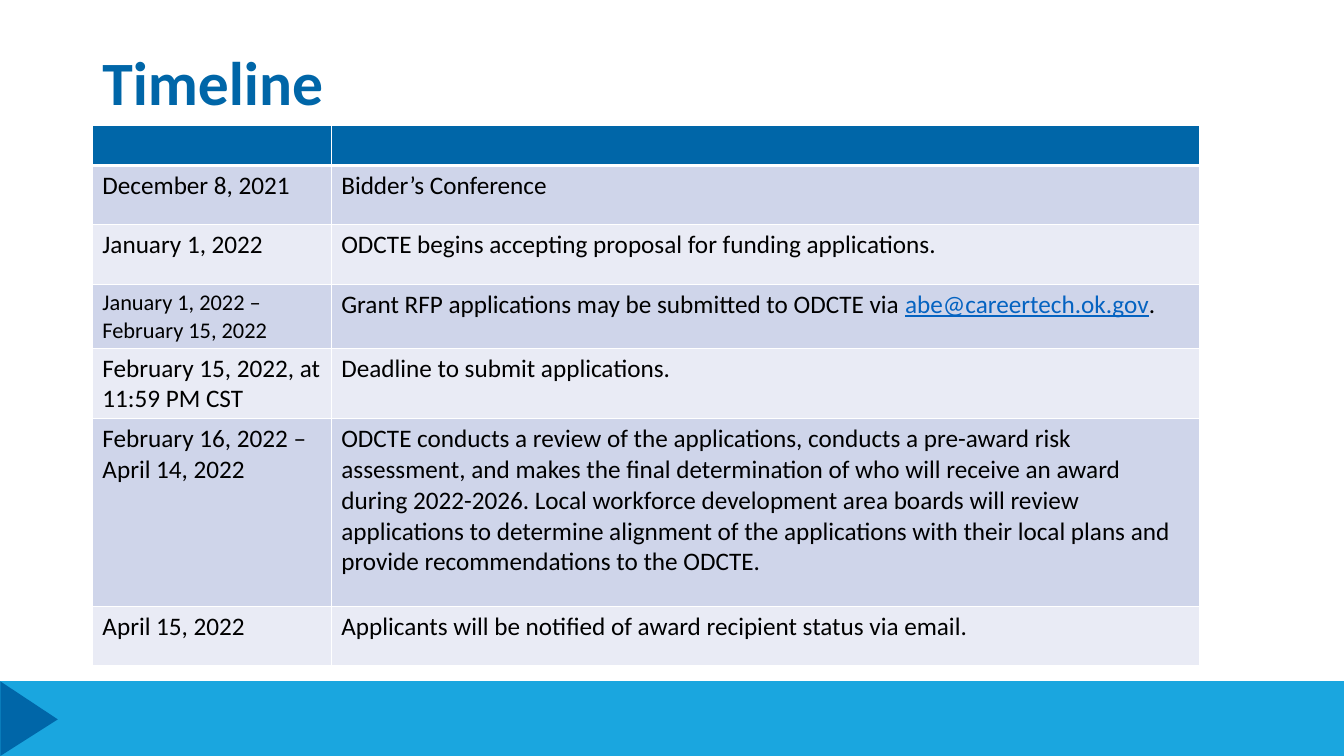
from dataclasses import dataclass
from typing import Any

from lxml.etree import SubElement
from pptx import Presentation
from pptx.dml.color import RGBColor
from pptx.enum.shapes import MSO_SHAPE
from pptx.enum.text import MSO_ANCHOR
from pptx.oxml.ns import qn
from pptx.util import Emu, Inches, Pt

NAVY = RGBColor(0x00, 0x66, 0xA8)
SKY = RGBColor(0x1A, 0xA6, 0xDF)
LINK = RGBColor(0x05, 0x63, 0xC1)
BLACK = RGBColor(0, 0, 0)
WHITE = RGBColor(0xFF, 0xFF, 0xFF)
STRIPES = (RGBColor(0xCF, 0xD5, 0xEA), RGBColor(0xE9, 0xEB, 0xF5))

GRID_COLUMNS, GRID_ROWS = 160, 90
UNIT = Inches(7.5) / GRID_ROWS

TITLE_FORMAT = {"name": "Calibri", "size": Pt(44), "bold": True}
BODY_FORMAT = {"name": "Calibri", "size": Pt(18)}
DATE_WIDTH, EVENT_WIDTH = 28.44, 103.32
HEADER_HEIGHT = 4.56
CONTACT = "abe@careertech.ok.gov"


@dataclass(frozen=True)
class Area:
    """A place on the slide, in grid columns and rows."""
    column: float
    row: float
    width: float
    height: float

    def lengths(self) -> tuple[Emu, ...]:
        return tuple(map(grid, (self.column, self.row, self.width, self.height)))


@dataclass(frozen=True)
class Milestone:
    dates: tuple[str, ...]
    event: str
    height: float = 7.08
    date_size: int = 18


MILESTONES = (
    Milestone(("December 8, 2021",), "Bidder’s Conference"),
    Milestone(("January 1, 2022",), "ODCTE begins accepting proposal for funding applications."),
    Milestone(("January 1, 2022 –", "February 15, 2022"),
              f"Grant RFP applications may be submitted to ODCTE via {CONTACT}.", 7.2, 16),
    Milestone(("February 15, 2022, at 11:59 PM CST",), "Deadline to submit applications.", 8.16),
    Milestone(("February 16, 2022 –", "April 14, 2022"),
              "ODCTE conducts a review of the applications, conducts a pre-award risk assessment, "
              "and makes the final determination of who will receive an award during 2022-2026. "
              "Local workforce development area boards will review applications to determine "
              "alignment of the applications with their local plans and provide recommendations "
              "to the ODCTE.", 22.32),
    Milestone(("April 15, 2022",),
              "Applicants will be notified of award recipient status via email."),
)


def grid(units: float) -> Emu:
    return Emu(round(units * UNIT))


def add_run(paragraph: Any, text: str, formats: dict[str, Any], color: RGBColor) -> None:
    run = paragraph.add_run()
    run.text = text
    for attribute, value in formats.items():
        setattr(run.font, attribute, value)
    run.font.color.rgb = color


def add_footer_shape(slide: Any, preset: MSO_SHAPE, area: Area, color: RGBColor) -> Any:
    shape = slide.shapes.add_shape(preset, *area.lengths())
    shape.shadow.inherit = False
    shape.fill.solid()
    shape.fill.fore_color.rgb = color
    shape.line.fill.background()
    return shape


def add_title(slide: Any, text: str, area: Area) -> None:
    frame = slide.shapes.add_textbox(*area.lengths()).text_frame
    frame.word_wrap = True
    frame.vertical_anchor = MSO_ANCHOR.MIDDLE
    paragraph = frame.paragraphs[0]
    paragraph.line_spacing = 0.9
    add_run(paragraph, text, TITLE_FORMAT, NAVY)


def style_cell(cell: Any, color: RGBColor, top: float = 1, bottom: float = 1) -> None:
    """Set white borders, with top and bottom widths in points, and the fill."""
    properties = cell._tc.get_or_add_tcPr()
    for side, width in (("L", 1), ("R", 1), ("T", top), ("B", bottom)):
        border = SubElement(properties, qn(f"a:ln{side}"), w=str(Pt(width)))
        fill = SubElement(border, qn("a:solidFill"))
        SubElement(fill, qn("a:srgbClr"), val=str(WHITE))
    cell.fill.solid()
    cell.fill.fore_color.rgb = color


def write_dates(cell: Any, milestone: Milestone) -> None:
    frame = cell.text_frame
    formats = BODY_FORMAT | {"size": Pt(milestone.date_size)}
    for index, line in enumerate(milestone.dates):
        paragraph = frame.add_paragraph() if index else frame.paragraphs[0]
        add_run(paragraph, line, formats, BLACK)


def write_event(cell: Any, event: str) -> None:
    """Write the event, with the contact address underlined."""
    paragraph = cell.text_frame.paragraphs[0]
    before, contact, after = event.partition(CONTACT)
    add_run(paragraph, before, BODY_FORMAT, BLACK)
    if contact:
        add_run(paragraph, contact, BODY_FORMAT | {"underline": True}, LINK)
        add_run(paragraph, after, BODY_FORMAT, BLACK)


def add_timeline(slide: Any, column: float, row: float) -> None:
    heights = [HEADER_HEIGHT, *(milestone.height for milestone in MILESTONES)]
    area = Area(column, row, DATE_WIDTH + EVENT_WIDTH, sum(heights))
    timeline = slide.shapes.add_table(len(heights), 2, *area.lengths()).table
    for table_column, width in zip(timeline.columns, (DATE_WIDTH, EVENT_WIDTH)):
        table_column.width = grid(width)
    for table_row, height in zip(timeline.rows, heights):
        table_row.height = grid(height)
    for header in timeline.rows[0].cells:
        style_cell(header, NAVY, bottom=3)
    for index, milestone in enumerate(MILESTONES):
        date_cell, event_cell = timeline.rows[index + 1].cells
        for cell in (date_cell, event_cell):
            style_cell(cell, STRIPES[index % 2], top=1 if index else 3)
        write_dates(date_cell, milestone)
        write_event(event_cell, milestone.event)


def main() -> None:
    presentation = Presentation()
    presentation.slide_width = grid(GRID_COLUMNS)
    presentation.slide_height = grid(GRID_ROWS)
    slide = presentation.slides.add_slide(presentation.slide_layouts[6])
    add_footer_shape(slide, MSO_SHAPE.RECTANGLE, Area(0, 81.1, GRID_COLUMNS, 8.9), SKY)
    pointer = add_footer_shape(slide, MSO_SHAPE.ISOSCELES_TRIANGLE,
                               Area(-0.98, 82.14, 8.88, 6.84), NAVY)
    pointer.rotation = 90
    pointer.adjustments[0] = 0.51
    add_title(slide, "Timeline", Area(11, 1.44, 138, 17.4))
    add_timeline(slide, 11, 14.88)
    presentation.save("out.pptx")


if __name__ == "__main__":
    main()
